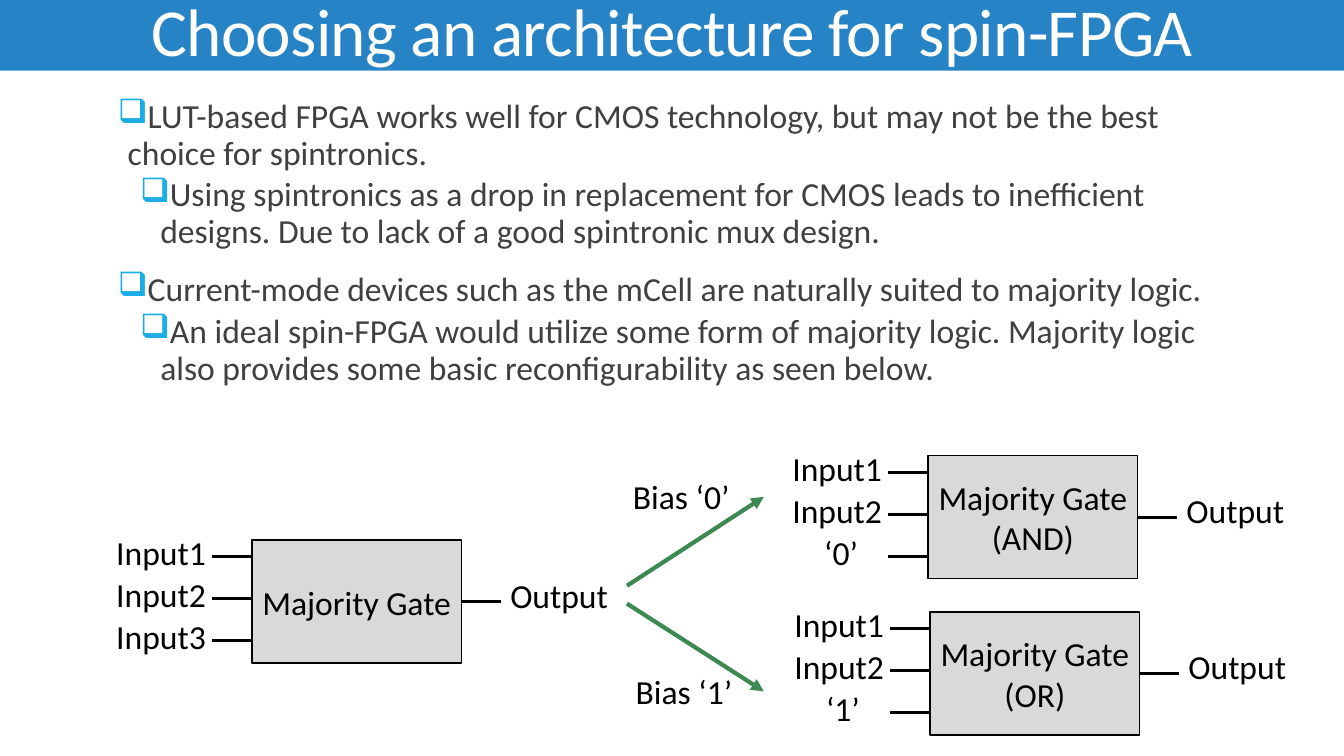
from lxml import etree
from pptx import Presentation
from pptx import util as u
from pptx.dml.color import RGBColor
from pptx.enum import shapes, text
from pptx.oxml.ns import qn

BLUE = RGBColor(0x26, 0x83, 0xC6)
CYAN = RGBColor(0x1C, 0xAD, 0xE4)
GREEN = RGBColor(0x3E, 0x88, 0x53)
GREY = RGBColor(0xD9, 0xD9, 0xD9)
DARK = RGBColor(0x40, 0x40, 0x40)
BLACK = RGBColor(0, 0, 0)
WHITE = RGBColor(255, 255, 255)

SLIDE_WIDTH, SLIDE_HEIGHT = 33.87, 19.05
GATE_SIZE = (5.28, 3.1)
PIN_PITCH = 1.06
WIRE_LENGTH = 1.0

BULLETS = [
    (0, "LUT-based FPGA works well for CMOS technology, but may not be the best "
        "choice for spintronics."),
    (1, "Using spintronics as a drop in replacement for CMOS leads to inefficient "
        "designs. Due to lack of a good spintronic mux design."),
    (0, "Current-mode devices such as the mCell are naturally suited to majority logic."),
    (1, "An ideal spin-FPGA would utilize some form of majority logic. Majority logic "
        "also provides some basic reconfigurability as seen below."),
]


def write(paragraph, words, size=24, color=BLACK, align=text.PP_ALIGN.LEFT,
          line=1.0, before=0, after=0, spacing=None):
    paragraph.alignment = align
    paragraph.line_spacing = line
    paragraph.space_before, paragraph.space_after = u.Pt(before), u.Pt(after)
    run = paragraph.add_run()
    run.text = words
    run.font.name, run.font.size = "Calibri", u.Pt(size)
    run.font.color.rgb = color
    if spacing is not None:
        run.font._element.set("spc", str(spacing))


def add_label(slide, left, top, words):
    label = slide.shapes.add_textbox(u.Cm(left), u.Cm(top), u.Cm(3.0), u.Cm(1.27))
    label.text_frame.word_wrap = True
    write(label.text_frame.paragraphs[0], words)


def add_box(slide, left, top, width, height, fill):
    box = slide.shapes.add_shape(shapes.MSO_SHAPE.RECTANGLE, u.Cm(left), u.Cm(top),
                                 u.Cm(width), u.Cm(height))
    box.shadow.inherit = False
    box.fill.solid()
    box.fill.fore_color.rgb = fill
    box.line.fill.background()
    return box


def add_line(slide, start, end, color=BLACK, width=2.25, arrow=False):
    line = slide.shapes.add_connector(shapes.MSO_CONNECTOR.STRAIGHT,
                                      *(u.Cm(value) for value in (*start, *end)))
    line.line.color.rgb = color
    line.line.width = u.Pt(width)
    if arrow:
        etree.SubElement(line.line._get_or_add_ln(), qn("a:tailEnd"), type="triangle")
    etree.SubElement(line._element.spPr, qn("a:effectLst"))
    return line


def add_title(slide, left, top, width, height, words):
    # Band across the top, behind the title
    band = add_box(slide, 0, 0, SLIDE_WIDTH, 1.78, BLUE)
    slide.shapes._spTree.insert(2, band._element)
    title = slide.shapes.title
    title.left, title.top = u.Cm(left), u.Cm(top)
    title.width, title.height = u.Cm(width), u.Cm(height)
    frame = title.text_frame
    frame.auto_size = text.MSO_AUTO_SIZE.NONE
    frame.vertical_anchor = text.MSO_ANCHOR.BOTTOM
    write(frame.paragraphs[0], words, size=48, color=WHITE,
          align=text.PP_ALIGN.CENTER, line=0.85, spacing=-50)


def add_bullets(slide, left, top, width, height, items):
    body = slide.shapes.add_textbox(u.Cm(left), u.Cm(top), u.Cm(width), u.Cm(height))
    frame = body.text_frame
    frame.word_wrap = True
    frame.margin_left = frame.margin_right = 0
    for index, (level, words) in enumerate(items):
        paragraph = frame.add_paragraph() if index else frame.paragraphs[0]
        paragraph.level = level
        before, after = ((12, 2), (2, 4))[level]
        write(paragraph, words, color=DARK, line=0.9, before=before, after=after)
        # Hanging indent and coloured bullet
        margin, hanging = ((0.25, 0.25), (1.07, 0.51))[level]
        properties = paragraph._p.get_or_add_pPr()
        properties.set("marL", str(u.Cm(margin)))
        properties.set("indent", str(-u.Cm(hanging)))
        bullet_color = etree.SubElement(properties, qn("a:buClr"))
        etree.SubElement(bullet_color, qn("a:srgbClr"), val=str(CYAN))
        etree.SubElement(properties, qn("a:buChar"), char="❑")


def add_gate(slide, left, top, width, height, names, inputs):
    gate = add_box(slide, left, top, width, height, GREY)
    gate.line.color.rgb = BLACK
    gate.line.width = u.Pt(1)
    frame = gate.text_frame
    frame.word_wrap = True
    frame.margin_left = frame.margin_right = u.Cm(0.1)
    frame.vertical_anchor = text.MSO_ANCHOR.MIDDLE
    for index, name in enumerate(names):
        paragraph = frame.add_paragraph() if index else frame.paragraphs[0]
        write(paragraph, name, align=text.PP_ALIGN.CENTER)

    # Inputs: a constant sits closer to its wire than a named input
    for index, name in enumerate(inputs):
        offset = index * PIN_PITCH
        wire = top + 0.42 + offset
        add_line(slide, (left - WIRE_LENGTH, wire), (left, wire))
        gap = 3.67 if name.startswith("Input") else 2.87
        add_label(slide, left - gap, top - 0.33 + offset, name)

    # Output
    right, middle = left + width, top + height / 2
    output = add_line(slide, (right, middle), (right + WIRE_LENGTH, middle))
    output.begin_connect(gate, 3)
    add_label(slide, right + 0.98, top + 0.74, "Output")


def add_bias(slide, start, end, label_at, words):
    add_line(slide, start, end, color=GREEN, width=3, arrow=True)
    add_label(slide, *label_at, words)


def main():
    presentation = Presentation()
    presentation.slide_width = u.Cm(SLIDE_WIDTH)
    presentation.slide_height = u.Cm(SLIDE_HEIGHT)
    slide = presentation.slides.add_slide(presentation.slide_layouts[5])

    add_title(slide, 2.97, -0.13, 27.94, 2.03, "Choosing an architecture for spin-FPGA")
    add_bullets(slide, 2.97, 2.39, 27.46, 11.18, BULLETS)

    # General gate and its two biased forms
    add_gate(slide, 6.35, 13.61, *GATE_SIZE, ["Majority Gate"],
             ["Input1", "Input2", "Input3"])
    add_gate(slide, 23.39, 11.48, *GATE_SIZE, ["Majority Gate", "(AND)"],
             ["Input1", "Input2", "‘0’"])
    add_gate(slide, 23.44, 15.42, *GATE_SIZE, ["Majority Gate", "(OR)"],
             ["Input1", "Input2", "‘1’"])

    # Bias arrows
    add_bias(slide, (15.8, 14.76), (19.25, 12.52), (15.7, 11.86), "Bias ‘0’")
    add_bias(slide, (15.8, 15.21), (19.25, 17.42), (15.77, 16.79), "Bias ‘1’")

    presentation.save("out.pptx")


if __name__ == "__main__":
    main()
